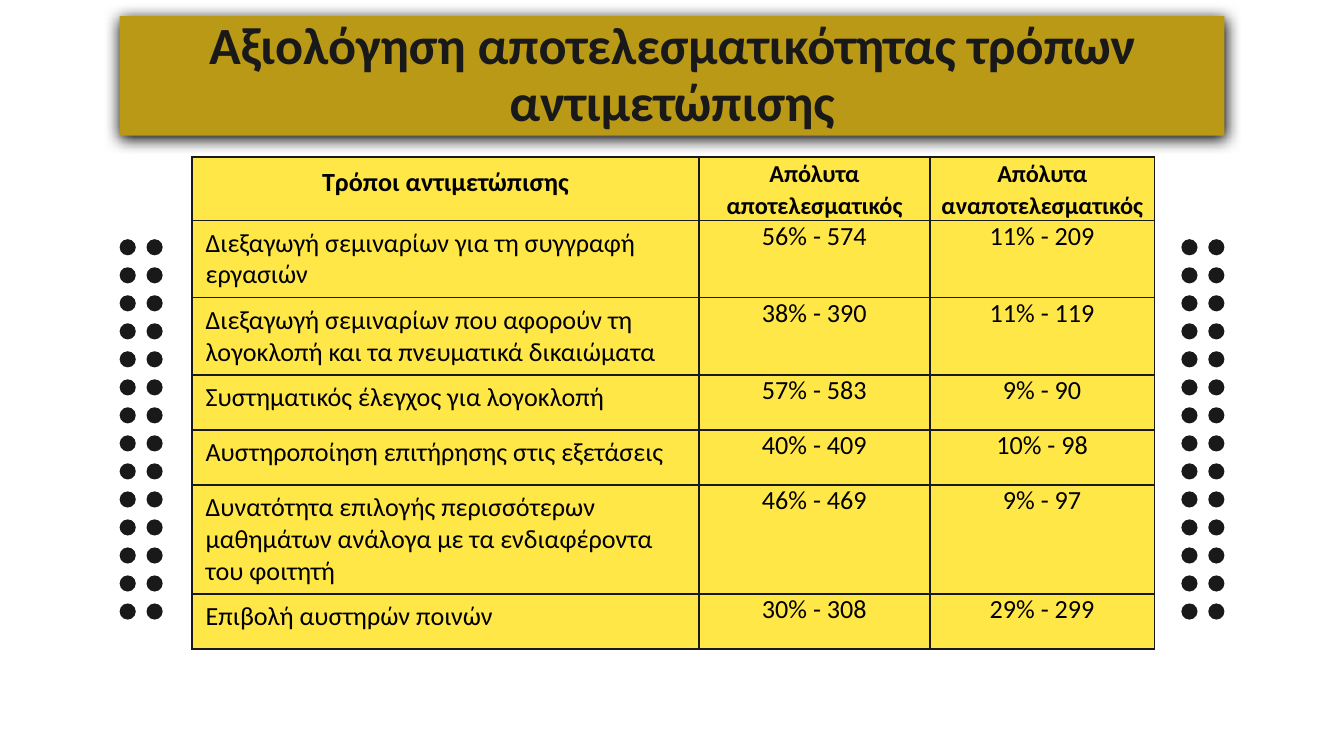
import itertools

import lxml.etree
import pptx
import pptx.dml.color
import pptx.enum.shapes
import pptx.enum.text
import pptx.oxml.ns
import pptx.util

Inches = pptx.util.Inches
Pt = pptx.util.Pt
qn = pptx.oxml.ns.qn
Align = pptx.enum.text.PP_ALIGN

TITLE = "Αξιολόγηση αποτελεσματικότητας τρόπων αντιμετώπισης"
HEADER = ("Τρόποι αντιμετώπισης", "Απόλυτα αποτελεσματικός", "Απόλυτα αναποτελεσματικός")
ROWS = [
    ("Διεξαγωγή σεμιναρίων για τη συγγραφή εργασιών", "56% - 574", "11% - 209"),
    ("Διεξαγωγή σεμιναρίων που αφορούν τη λογοκλοπή και τα πνευματικά δικαιώματα",
     "38% - 390", "11% - 119"),
    ("Συστηματικός έλεγχος για λογοκλοπή", "57% - 583", "9% - 90"),
    ("Αυστηροποίηση επιτήρησης στις εξετάσεις", "40% - 409", "10% - 98"),
    ("Δυνατότητα επιλογής περισσότερων μαθημάτων ανάλογα με τα ενδιαφέροντα του φοιτητή",
     "46% - 469", "9% - 97"),
    ("Επιβολή αυστηρών ποινών", "30% - 308", "29% - 299"),
]

THEME = {
    "font": "Calibri",
    "dark": "191919", "text": "000000", "banner": "B99915", "cell": "FFE747",
    "title_size": 28, "body_size": 14, "narrow_header_size": 13,
}

SLIDE_WIDTH = Inches(10)
SLIDE_HEIGHT = SLIDE_WIDTH * 9 // 16
TITLE_BOX = (0.89, 0.12, 8.22, 0.89)
TABLE_BOX = (1.43, 1.17, 7.16, 3.6)
COLUMN_WIDTHS = (3.77, 1.72, 1.67)
ROW_HEIGHT = 0.41
DOT_SIZE = 0.12
DOT_COLUMNS, DOT_ROWS = 2, 14
DOT_LEFTS, DOT_TOP, DOT_BOTTOM = (0.89, 8.79), 1.78, 4.49
DOT_STEP_X = 0.2
DOT_STEP_Y = (DOT_BOTTOM - DOT_TOP) / (DOT_ROWS - 1)


def color(name):
    return pptx.dml.color.RGBColor.from_string(THEME[name])


def apply(target, values):
    for name, value in values.items():
        setattr(target, name, value)


def fill_solid(owner, name):
    owner.fill.solid()
    owner.fill.fore_color.rgb = color(name)


def write(text_frame, text, paragraph_format, size, bold, ink):
    text_frame.text = text
    paragraph = text_frame.paragraphs[0]
    apply(paragraph, paragraph_format)
    apply(paragraph.runs[0].font, {"name": THEME["font"], "size": Pt(size), "bold": bold})
    paragraph.runs[0].font.color.rgb = color(ink)


def add_child(parent, tag, **attributes):
    return lxml.etree.SubElement(parent, qn(tag), attributes)


def add_shadow(shape):
    effects = add_child(shape._element.spPr, "a:effectLst")
    shadow = add_child(effects, "a:outerShdw", blurRad=str(Pt(8.5)), dist=str(Pt(1)),
                       dir="5400000", algn="t", rotWithShape="0")
    add_child(shadow, "a:srgbClr", val=THEME["text"])


def add_borders(cell):
    """Draw a 1 pt line on all sides; borders must precede the cell's fill."""
    properties = cell._tc.get_or_add_tcPr()
    for side in ("a:lnL", "a:lnR", "a:lnT", "a:lnB"):
        line = add_child(properties, side, w=str(Pt(1)))
        add_child(add_child(line, "a:solidFill"), "a:srgbClr", val=THEME["dark"])


def add_title(slide):
    title = slide.shapes.title
    apply(title, dict(zip(("left", "top", "width", "height"), map(Inches, TITLE_BOX))))
    fill_solid(title, "banner")
    add_shadow(title)
    write(title.text_frame, TITLE, {"alignment": Align.CENTER, "line_spacing": 0.9},
          THEME["title_size"], True, "dark")
    apply(title.text_frame, {
        "word_wrap": True,
        "auto_size": pptx.enum.text.MSO_AUTO_SIZE.NONE,
        "vertical_anchor": pptx.enum.text.MSO_ANCHOR.MIDDLE,
    })


def add_results_table(slide):
    content = [HEADER, *ROWS]
    frame = slide.shapes.add_table(len(content), len(HEADER), *map(Inches, TABLE_BOX))
    table = frame.table
    apply(table, {"first_row": False, "horz_banding": False})
    for column, width in zip(table.columns, COLUMN_WIDTHS):
        column.width = Inches(width)
    for row in table.rows:
        row.height = Inches(ROW_HEIGHT)
    frame.height = Inches(TABLE_BOX[3])

    for row_index, texts in enumerate(content):
        for column_index, text in enumerate(texts):
            cell = table.cell(row_index, column_index)
            is_header, is_result = row_index == 0, column_index > 0
            add_borders(cell)
            fill_solid(cell, "cell")
            if is_result:
                apply(cell, dict.fromkeys(
                    ("margin_left", "margin_top", "margin_right", "margin_bottom"), 0))
            size = THEME["narrow_header_size" if is_header and is_result else "body_size"]
            paragraph_format = {
                "alignment": Align.CENTER if is_header or is_result else Align.LEFT,
                "line_spacing": 1.07 if is_header else 1.0,
            }
            write(cell.text_frame, text, paragraph_format, size, is_header, "text")


def add_dot_grid(slide, left):
    group = slide.shapes.add_group_shape()
    for row, column in itertools.product(range(DOT_ROWS), range(DOT_COLUMNS)):
        dot = group.shapes.add_shape(
            pptx.enum.shapes.MSO_SHAPE.OVAL,
            Inches(left + column * DOT_STEP_X), Inches(DOT_TOP + row * DOT_STEP_Y),
            Inches(DOT_SIZE), Inches(DOT_SIZE))
        fill_solid(dot, "dark")
        dot.line.fill.background()
        dot.shadow.inherit = False


def main():
    presentation = pptx.Presentation()
    apply(presentation, {"slide_width": SLIDE_WIDTH, "slide_height": SLIDE_HEIGHT})
    slide = presentation.slides.add_slide(presentation.slide_layouts[5])
    add_title(slide)
    add_results_table(slide)
    for left in DOT_LEFTS:
        add_dot_grid(slide, left)
    presentation.save("out.pptx")


if __name__ == "__main__":
    main()
